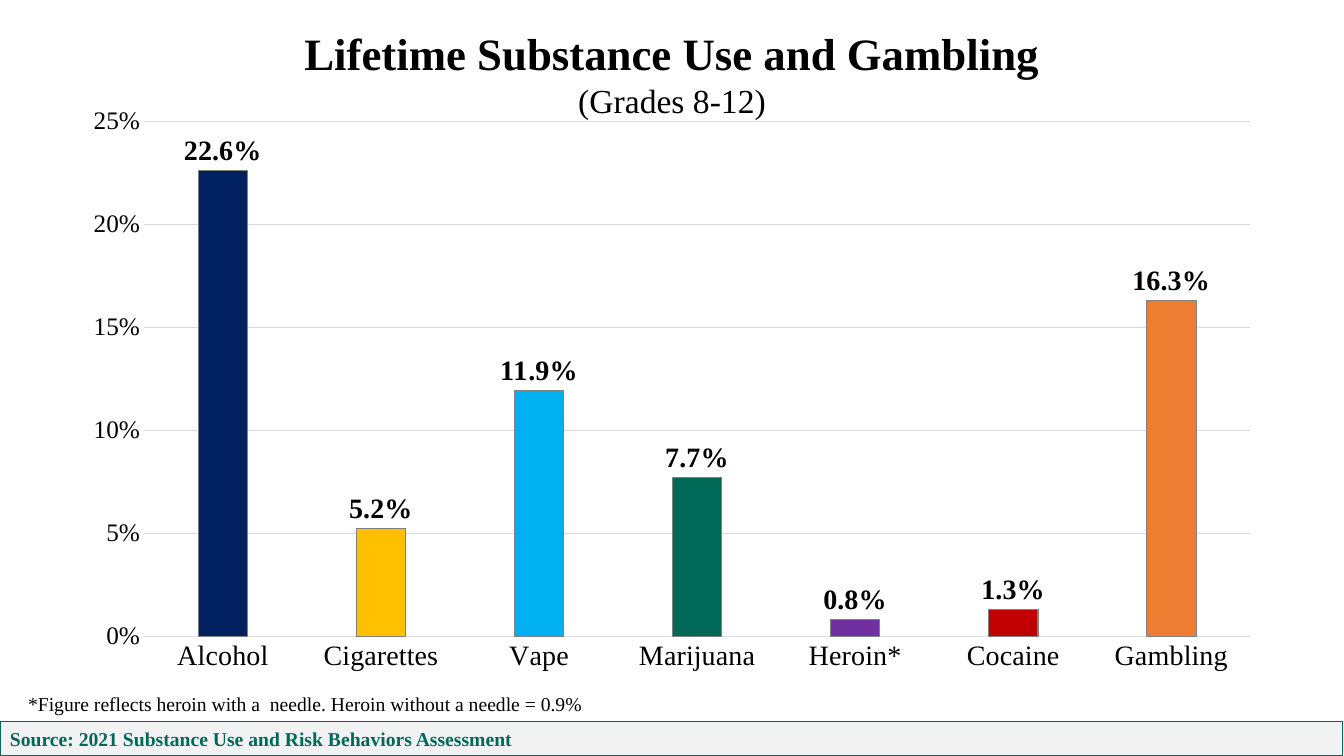
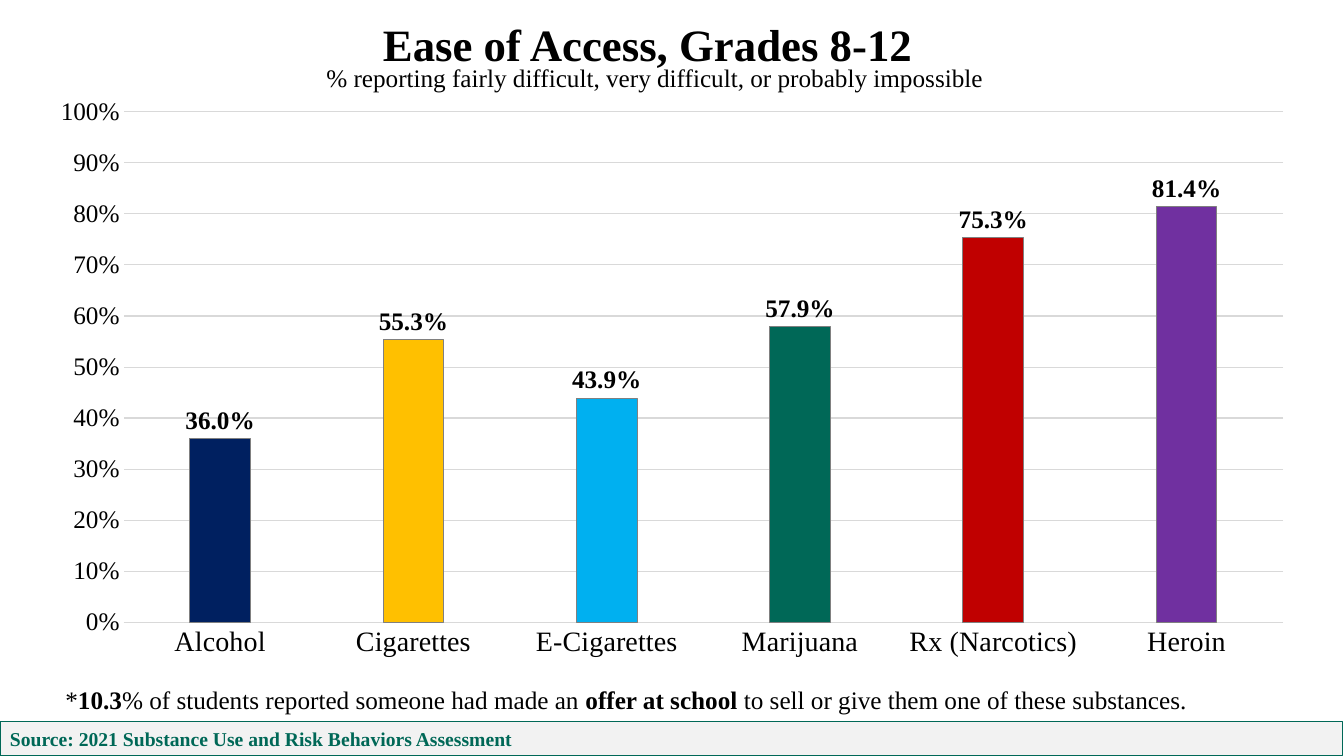
from pptx import Presentation
from pptx import util as u
from pptx.chart import data as chart_data
from pptx.dml.color import RGBColor
from pptx.enum import chart as ch, shapes, text

BLACK = RGBColor(0x00, 0x00, 0x00)
GRID = RGBColor(0xD9, 0xD9, 0xD9)
OUTLINE = RGBColor(0x80, 0x80, 0x80)
BAND = RGBColor(0xF2, 0xF2, 0xF2)
NAVY = RGBColor(0x00, 0x20, 0x60)
YELLOW = RGBColor(0xFF, 0xC0, 0x00)
SKY = RGBColor(0x00, 0xB0, 0xF0)
GREEN = RGBColor(0x00, 0x68, 0x57)
PURPLE = RGBColor(0x70, 0x30, 0xA0)
RED = RGBColor(0xC0, 0x00, 0x00)
ORANGE = RGBColor(0xED, 0x7D, 0x31)

SERIF = "Times New Roman"
CENTER = text.PP_ALIGN.CENTER
LEFT = text.PP_ALIGN.LEFT
SOURCE = "Source: 2021 Substance Use and Risk Behaviors Assessment"

LIFETIME_USE = [
    ("Alcohol", 0.226, NAVY),
    ("Cigarettes", 0.052, YELLOW),
    ("Vape", 0.119, SKY),
    ("Marijuana", 0.077, GREEN),
    ("Heroin*", 0.008, PURPLE),
    ("Cocaine", 0.013, RED),
    ("Gambling", 0.163, ORANGE),
]
ACCESS = [
    ("Alcohol", 0.36, NAVY),
    ("Cigarettes", 0.553, YELLOW),
    ("E-Cigarettes", 0.439, SKY),
    ("Marijuana", 0.579, GREEN),
    ("Rx (Narcotics)", 0.753, RED),
    ("Heroin", 0.814, PURPLE),
]


def apply(target, formats):
    for name, value in formats.items():
        setattr(target, name, value)


def style_font(font, size, bold=False, color=BLACK, name=SERIF):
    apply(font, {"size": u.Pt(size), "bold": bold, "name": name})
    font.color.rgb = color


def style_line(line, color):
    line.color.rgb = color
    line.width = u.Pt(0.75)


def write(frame, paragraphs, align=LEFT, color=BLACK, spacing=1.0):
    apply(frame, {"word_wrap": True, "auto_size": text.MSO_AUTO_SIZE.SHAPE_TO_FIT_TEXT})
    for index, runs in enumerate(paragraphs):
        paragraph = frame.add_paragraph() if index else frame.paragraphs[0]
        apply(paragraph, {"alignment": align, "line_spacing": spacing})
        for words, size, bold in runs:
            run = paragraph.add_run()
            run.text = words
            style_font(run.font, size, bold, color)


def add_text(slide, box, paragraphs, **formats):
    textbox = slide.shapes.add_textbox(*map(u.Inches, box))
    write(textbox.text_frame, paragraphs, **formats)


def add_source_band(slide):
    box = map(u.Inches, (0, 7.16, 13.32, 0.34))
    band = slide.shapes.add_shape(shapes.MSO_SHAPE.RECTANGLE, *box)
    band.shadow.inherit = False
    band.fill.solid()
    band.fill.fore_color.rgb = BAND
    style_line(band.line, GREEN)
    write(band.text_frame, [[(SOURCE, 14, True)]], color=GREEN)


def add_bar_chart(slide, box, bars, maximum, step, label_size):
    names, values, colors = zip(*bars)
    data = chart_data.CategoryChartData(number_format="0.0%")
    data.categories = names
    data.add_series("Series 1", values)
    frame = slide.shapes.add_chart(
        ch.XL_CHART_TYPE.COLUMN_CLUSTERED, *map(u.Inches, box), data)
    chart = frame.chart
    apply(chart, {"has_legend": False, "has_title": False})
    style_font(chart.font, 10, name="Calibri")

    plot = chart.plots[0]
    apply(plot, {"gap_width": 219, "overlap": -27,
                 "vary_by_categories": False, "has_data_labels": True})
    apply(plot.data_labels, {
        "show_value": True, "number_format": "0.0%",
        "number_format_is_linked": False,
        "position": ch.XL_LABEL_POSITION.OUTSIDE_END})
    style_font(plot.data_labels.font, label_size, True)

    series = plot.series[0]
    series.format.fill.solid()
    series.format.fill.fore_color.rgb = NAVY
    style_line(series.format.line, OUTLINE)
    for index, color in enumerate(colors):
        point = series.points[index].format
        point.fill.solid()
        point.fill.fore_color.rgb = color
        style_line(point.line, OUTLINE)

    for axis, size in ((chart.category_axis, 20), (chart.value_axis, 18)):
        apply(axis, {"major_tick_mark": ch.XL_TICK_MARK.NONE,
                     "minor_tick_mark": ch.XL_TICK_MARK.NONE})
        style_font(axis.tick_labels.font, size)
    style_line(chart.category_axis.format.line, GRID)

    value_axis = chart.value_axis
    apply(value_axis, {"minimum_scale": 0, "maximum_scale": maximum,
                       "major_unit": step, "has_major_gridlines": True})
    apply(value_axis.tick_labels, {"number_format": "0%",
                                   "number_format_is_linked": False})
    value_axis.format.line.fill.background()
    style_line(value_axis.major_gridlines.format.line, GRID)


def build_lifetime_slide(slide):
    add_bar_chart(slide, (0.69, 0.95, 11.95, 5.83), LIFETIME_USE, 0.25, 0.05, 20)
    add_text(slide, (0.18, 6.7, 5.93, 0.42), [[
        ("*Figure reflects heroin with a  needle. Heroin without a needle = 0.9%", 14, False),
    ]], spacing=1.5)
    add_text(slide, (1.54, 0.21, 10.25, 1.04), [
        [("Lifetime Substance Use and Gambling", 32, True)],
        [("(Grades 8-12)", 24, False)],
    ], align=CENTER)
    add_source_band(slide)


def build_access_slide(slide):
    add_bar_chart(slide, (0.35, 0.86, 12.63, 5.78), ACCESS, 1, 0.1, 18)
    add_text(slide, (3.7, 0.12, 5.93, 0.64), [[("Ease of Access, Grades 8-12", 32, True)]])
    add_text(slide, (3.06, 0.57, 6.87, 0.4), [[
        ("% reporting fairly difficult, very difficult, or probably impossible", 18, False),
    ]], align=CENTER)
    add_text(slide, (0.55, 6.74, 12.2, 0.4), [[
        ("*", 18, False),
        ("10.3", 18, True),
        ("% of students reported someone had made an ", 18, False),
        ("offer at school ", 18, True),
        ("to sell or give them one of these substances.", 18, False),
    ]])
    add_source_band(slide)


def main():
    presentation = Presentation()
    apply(presentation, {"slide_width": u.Inches(13.33), "slide_height": u.Inches(7.5)})
    for build in (build_lifetime_slide, build_access_slide):
        build(presentation.slides.add_slide(presentation.slide_layouts[6]))
    presentation.save("out.pptx")


if __name__ == "__main__":
    main()
